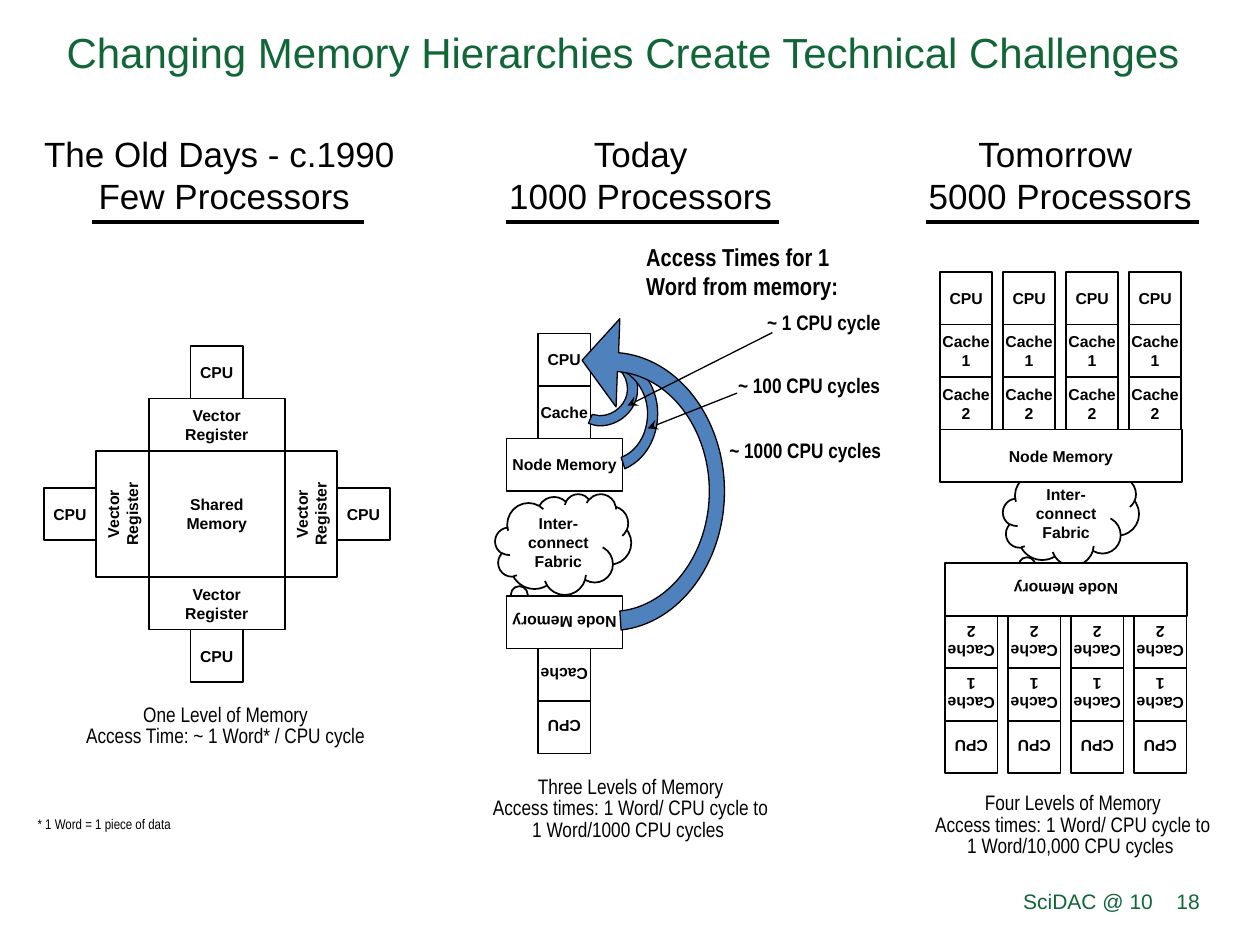
from copy import deepcopy
from lxml import etree
from pptx import Presentation, util as u
from pptx.dml import color
from pptx.enum import shapes, text
from pptx.oxml import ns

GREEN, BLACK, WHITE, BLUE = "106636", "000000", "FFFFFF", "4F81BD"
NARROW = "Arial Narrow"
UNIT = 5 / 12      # side of one CPU or cache block
PITCH = 0.5        # distance between processor columns
CENTER, LEFT, RIGHT = text.PP_ALIGN.CENTER, text.PP_ALIGN.LEFT, text.PP_ALIGN.RIGHT
TOP, MIDDLE = text.MSO_ANCHOR.TOP, text.MSO_ANCHOR.MIDDLE
RECT = shapes.MSO_SHAPE.RECTANGLE
hex_color = color.RGBColor.from_string

prs = Presentation()
prs.slide_width, prs.slide_height = u.Inches(10), u.Inches(7.5)
slide = prs.slides.add_slide(prs.slide_layouts[5])


def write(holder, words, size=9, font="Arial", ink=BLACK, bold=False,
          align=CENTER, anchor=MIDDLE, spacing=None, wrap=False):
    """Fill a shape with text: \\n parts paragraphs, \\v breaks a line."""
    frame = holder.text_frame
    frame.word_wrap, frame.vertical_anchor = wrap, anchor
    frame.text = words
    for par in frame.paragraphs:
        par.alignment = align
        if spacing:
            par.line_spacing = spacing
        for run in par.runs:
            run.font.size, run.font.name, run.font.bold = u.Pt(size), font, bold
            run.font.color.rgb = hex_color(ink)
        for line_break in par._p.findall(ns.qn("a:br")):
            line_break.append(deepcopy(par.runs[0]._r.rPr))


def block(parent, left, top, width, height, words="", kind=RECT, turn=0, wrap=False):
    """Add a white outlined block with a bold label."""
    shape = parent.add_shape(kind, *map(u.Inches, (left, top, width, height)))
    shape.shadow.inherit = False
    shape.fill.solid()
    shape.fill.fore_color.rgb = hex_color(WHITE)
    shape.line.color.rgb = hex_color(BLACK)
    shape.line.width = u.Pt(1)
    shape.rotation = turn
    if words:
        write(shape, words, bold=True, wrap=wrap)
    return shape


# Title
title = slide.shapes.title
title.left, title.top, title.width, title.height = map(u.Inches, (-0.02, -0.06, 10.02, 1))
write(title, "Changing Memory Hierarchies Create Technical Challenges ",
      size=24, ink=GREEN, spacing=0.85, wrap=True)

# 1990: shared memory ringed by vector registers and CPUs
old_days = slide.shapes.add_group_shape().shapes
mid_x, mid_y = 1.72, 4.08
mem_w, mem_h = 1.08, 1
block(old_days, mid_x - mem_w / 2, mid_y - mem_h / 2, mem_w, mem_h, "Shared\nMemory")
for dx, dy in ((0, -1), (0, 1), (1, 0), (-1, 0)):
    reach_x, reach_y = (mem_w + UNIT) / 2, (mem_h + UNIT) / 2
    reg_w = mem_h if dx else mem_w
    block(old_days, mid_x + dx * reach_x - reg_w / 2, mid_y + dy * reach_y - UNIT / 2,
          reg_w, UNIT, "Vector\nRegister", turn=270 if dx else 0)
    block(old_days, mid_x + dx * (reach_x + UNIT) - UNIT / 2,
          mid_y + dy * (reach_y + UNIT) - UNIT / 2, UNIT, UNIT, "CPU")

# Interconnect clouds, today and tomorrow
for left, top in ((3.93, 3.92), (7.96, 3.69)):
    cloud = block(slide.shapes, left, top, 1.08, 0.8, "Inter-connect Fabric",
                  kind=shapes.MSO_SHAPE.CLOUD_CALLOUT, wrap=True)
    cloud.adjustments[0], cloud.adjustments[1] = -0.452, 0.7
block(slide.shapes, 3.93, 4.73, 0.33, 0.33).line.fill.background()  # covers the cloud's tail

# Nodes: processor columns above (upright) or below (upside down) the node memory
today_rows = ("CPU", "Cache")
tomorrow_rows = ("CPU", "Cache\n1", "Cache\n2")
for left, memory_top, memory_w, first, columns, rows, turn in (
        (4.02, 3.48, 0.92, 0.25, 1, today_rows, 0),
        (4.02, 4.73, 0.92, 0.25, 1, today_rows, 180),
        (7.46, 3.41, 1.92, 0, 4, tomorrow_rows, 0),
        (7.5, 4.47, 1.92, 0, 4, tomorrow_rows, 180)):
    node = slide.shapes.add_group_shape().shapes
    block(node, left, memory_top, memory_w, UNIT, "Node Memory", turn=turn)
    for column in range(columns):
        for row, label in enumerate(rows):
            steps = len(rows) - row
            block(node, left + first + column * PITCH,
                  memory_top + (steps if turn else -steps) * UNIT,
                  UNIT, UNIT, label, turn=turn)

# Curved access arrows: start, then corners (x, y) and curves (two controls and an end)
access_arrows = (
    ((4.78, 2.87), [(4.89, 2.88, 4.98, 2.97, 4.98, 3.09), (4.98, 3.2, 4.88, 3.3, 4.76, 3.3),
                    (4.74, 3.3, 4.72, 3.29, 4.7, 3.29), (4.67, 3.36),
                    (4.7, 3.37, 4.73, 3.38, 4.76, 3.38), (4.92, 3.38, 5.06, 3.25, 5.06, 3.09),
                    (5.06, 2.93, 4.94, 2.81, 4.79, 2.8),
                    (4.79, 2.72), (4.67, 2.83), (4.77, 2.95), (4.78, 2.87)]),
    ((4.83, 2.91), [(5, 2.92, 5.14, 3.09, 5.14, 3.28), (5.14, 3.44, 5.06, 3.58, 4.93, 3.63),
                    (4.96, 3.72),
                    (5.12, 3.65, 5.22, 3.48, 5.22, 3.28), (5.22, 3.04, 5.05, 2.83, 4.83, 2.82),
                    (4.84, 2.7), (4.68, 2.85), (4.82, 3.03), (4.83, 2.91)]),
    ((4.9, 2.95), [(5.31, 2.98, 5.63, 3.4, 5.63, 3.9), (5.63, 4.39, 5.32, 4.81, 4.92, 4.85),
                   (4.93, 5),
                   (5.39, 4.95, 5.75, 4.47, 5.75, 3.9), (5.75, 3.32, 5.38, 2.84, 4.91, 2.8),
                   (4.92, 2.53), (4.62, 2.86), (4.89, 3.23), (4.9, 2.95)]),
)
for start, segments in access_arrows:
    points = [(u.Inches(x), u.Inches(y)) for segment in segments
              for x, y in zip(segment[::2], segment[1::2])]
    builder = slide.shapes.build_freeform(*map(u.Inches, start))
    builder.add_line_segments(points, close=True)
    arrow = builder.convert_to_shape()
    # Join each three points of a curve into one Bezier segment
    corners = iter(list(arrow._element.iter(ns.qn("a:lnTo"))))
    for segment in segments:
        parts = [next(corners) for _ in segment[::2]]
        if len(parts) == 3:
            curve = etree.Element(ns.qn("a:cubicBezTo"))
            parts[0].addprevious(curve)
            for part in parts:
                curve.append(part[0])
                part.getparent().remove(part)
    arrow.shadow.inherit = False
    arrow.fill.solid()
    arrow.fill.fore_color.rgb = hex_color(BLUE)
    arrow.line.color.rgb = hex_color(BLACK)
    arrow.line.width = u.Pt(0.75)

# Heading rules, and pointers from the access times to the arrows
for x1, y1, x2, y2, weight, pointed in (
        (0.73, 1.76, 2.89, 1.76, 2.25, False),
        (4.02, 1.76, 6.18, 1.76, 2.25, False),
        (7.35, 1.76, 9.52, 1.76, 2.25, False),
        (4.98, 3.22, 6.13, 2.64, 0.75, True),
        (5.14, 3.4, 5.85, 3.12, 0.75, True)):
    rule = slide.shapes.add_connector(shapes.MSO_CONNECTOR.STRAIGHT,
                                      *map(u.Inches, (x1, y1, x2, y2)))
    rule.line.color.rgb = hex_color(BLACK)
    rule.line.width = u.Pt(weight)
    if pointed:
        etree.SubElement(rule.line._get_or_add_ln(), ns.qn("a:headEnd"), type="stealth")
    etree.SubElement(rule._element.spPr, ns.qn("a:effectLst"))

# Headings, captions, access times and footer
heading = dict(size=20, anchor=TOP)
caption = dict(size=12, font=NARROW, anchor=TOP, spacing=0.85)
timing = dict(size=12, font=NARROW, bold=True, align=LEFT, anchor=TOP)
footer = dict(size=12, ink=GREEN, align=RIGHT, wrap=True)
for left, top, width, height, words, style in (
        (0.24, 1, 3.08, 0.77, "The Old Days - c.1990 \nFew Processors", heading),
        (3.93, 1, 2.31, 0.77, "Today\n1000 Processors", heading),
        (7.26, 1, 2.31, 0.77, "Tomorrow \n5000 Processors", heading),
        (0.58, 5.55, 2.42, 0.44,
         "One Level of Memory\nAccess Time: ~ 1 Word* / CPU cycle", caption),
        (3.52, 6.12, 2.97, 0.61, "Three Levels of Memory\nAccess times: 1 Word/ CPU cycle to"
         "\v1 Word/1000 CPU cycles ", caption | dict(wrap=True)),
        (7.03, 6.25, 2.97, 0.61, "Four Levels of Memory\nAccess times: 1 Word/ CPU cycle to"
         "\v1 Word/10,000 CPU cycles ", caption | dict(wrap=True)),
        (5.03, 1.87, 2.02, 0.57, "Access Times for 1 Word from memory:",
         timing | dict(size=14, wrap=True)),
        (5.99, 2.41, 1.11, 0.3, "~ 1 CPU cycle", timing),
        (5.76, 2.91, 1.34, 0.3, "~ 100 CPU cycles", timing),
        (5.69, 3.42, 1.41, 0.3, "~ 1000 CPU cycles", timing),
        (0.2, 6.42, 1.26, 0.23, "* 1 Word = 1 piece of data",
         timing | dict(size=8, bold=False)),
        (3.42, 6.95, 5.83, 0.4, "SciDAC @ 10", footer),
        (9.2, 6.95, 0.42, 0.4, "18", footer)):
    label = slide.shapes.add_textbox(*map(u.Inches, (left, top, width, height)))
    write(label, words, **style)

prs.save("out.pptx")
